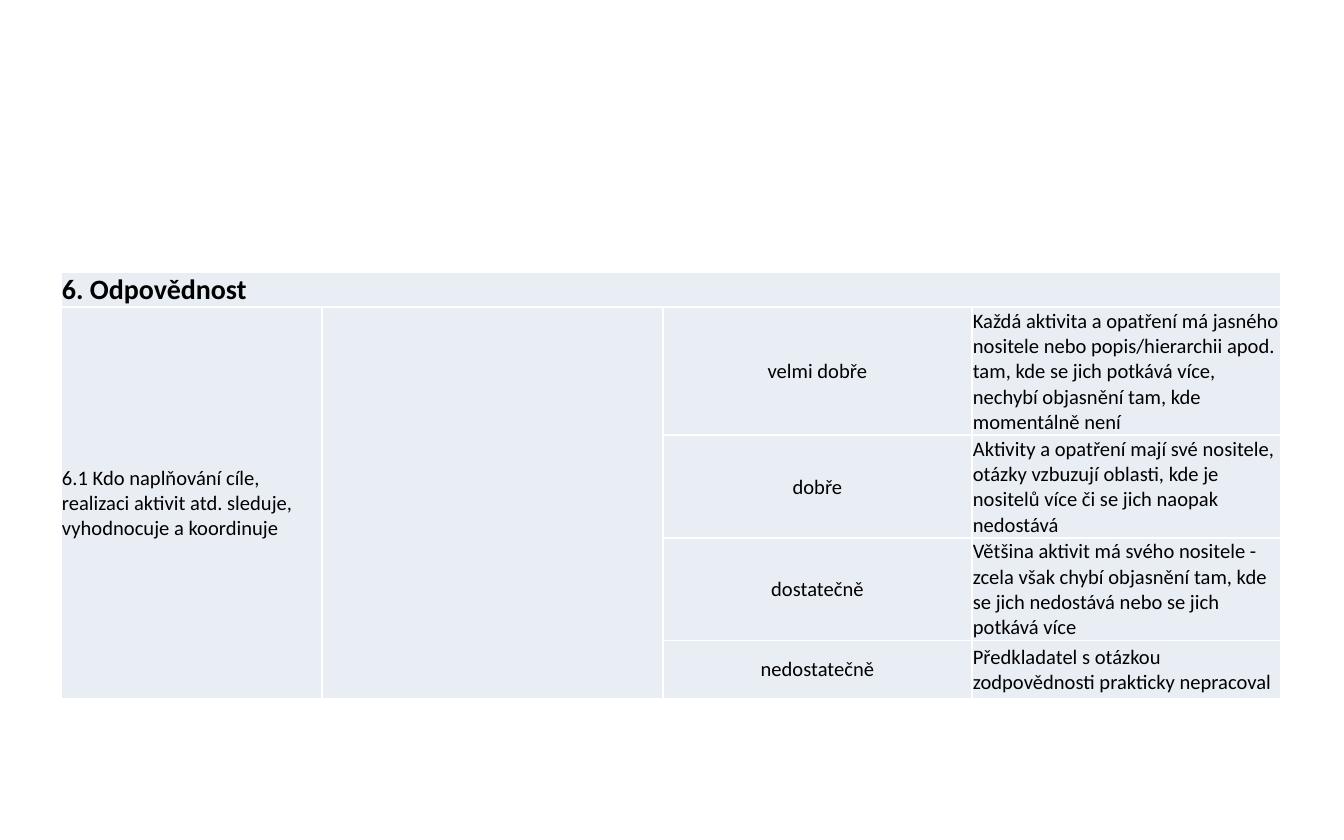
"""Build the slide with the rating table for responsibility."""
from lxml import etree
from pptx import Presentation
from pptx.dml.color import RGBColor
from pptx.enum.text import MSO_ANCHOR, PP_ALIGN
from pptx.oxml.ns import qn
from pptx.util import Emu, Pt

MIDDLE = MSO_ANCHOR.MIDDLE
LEFT, CENTER = PP_ALIGN.LEFT, PP_ALIGN.CENTER

BLACK = RGBColor(0x00, 0x00, 0x00)
WHITE = RGBColor(0xFF, 0xFF, 0xFF)
PALE_BLUE = RGBColor(0xE9, 0xED, 0xF4)
FONT = "Calibri"

HEADING = "6. Odpovědnost"
QUESTION = "6.1 Kdo naplňování cíle, realizaci aktivit atd. sleduje, vyhodnocuje a koordinuje"
RATINGS = [
    ("velmi dobře", "Každá aktivita a opatření má jasného nositele nebo popis/hierarchii apod. "
                    "tam, kde se jich potkává více, nechybí objasnění tam, kde momentálně není"),
    ("dobře", "Aktivity a opatření mají své nositele, otázky vzbuzují oblasti, "
              "kde je nositelů více či se jich naopak nedostává"),
    ("dostatečně", "Většina aktivit má svého nositele - zcela však chybí objasnění tam, "
                   "kde se jich nedostává nebo se jich potkává více"),
    ("nedostatečně", "Předkladatel s otázkou zodpovědnosti prakticky nepracoval"),
]

SLIDE_WIDTH, SLIDE_HEIGHT = 1344, 840
TABLE_LEFT, TABLE_TOP = 61, 272
COLUMN_WIDTHS = [261, 341, 309, 309]
ROW_HEIGHTS = [35, 127, 103, 102, 58]
INSET = 1
BORDER_WIDTH = Pt(1)


def px(length):
    """Turn a length in px into EMU."""
    return Emu(round(length * 914400 / 134.4))


def style_cell(cell):
    """Fill a cell and give it thin white borders."""
    cell.fill.solid()
    cell.fill.fore_color.rgb = PALE_BLUE
    cell.vertical_anchor = MIDDLE
    cell.margin_left = cell.margin_right = cell.margin_top = px(INSET)
    cell.margin_bottom = 0
    properties = cell._tc.get_or_add_tcPr()
    for position, side in enumerate(("a:lnL", "a:lnR", "a:lnT", "a:lnB")):
        border = etree.Element(qn(side), w=str(BORDER_WIDTH))
        fill = etree.SubElement(border, qn("a:solidFill"))
        etree.SubElement(fill, qn("a:srgbClr"), val=str(WHITE))
        properties.insert(position, border)


def write(cell, text, size=11, bold=False, align=LEFT):
    """Put one formatted paragraph into a cell."""
    cell.text_frame.text = text
    paragraph = cell.text_frame.paragraphs[0]
    paragraph.alignment = align
    font = paragraph.runs[0].font
    font.name, font.size, font.bold = FONT, Pt(size), bold
    font.color.rgb = BLACK


def main():
    """Lay out the table and save the presentation."""
    presentation = Presentation()
    presentation.slide_width = px(SLIDE_WIDTH)
    presentation.slide_height = px(SLIDE_HEIGHT)
    slide = presentation.slides.add_slide(presentation.slide_layouts[6])

    table = slide.shapes.add_table(
        len(ROW_HEIGHTS), len(COLUMN_WIDTHS), px(TABLE_LEFT), px(TABLE_TOP),
        px(sum(COLUMN_WIDTHS)), px(sum(ROW_HEIGHTS))).table
    table.first_row = table.horz_banding = False
    for column, width in zip(table.columns, COLUMN_WIDTHS):
        column.width = px(width)
    for row, height in zip(table.rows, ROW_HEIGHTS):
        row.height = px(height)
    for cell in table.iter_cells():
        style_cell(cell)

    last_row, last_column = len(ROW_HEIGHTS) - 1, len(COLUMN_WIDTHS) - 1
    table.cell(0, 0).merge(table.cell(0, last_column))
    for column in (0, 1):
        table.cell(1, column).merge(table.cell(last_row, column))

    write(table.cell(0, 0), HEADING, size=15, bold=True)
    write(table.cell(1, 0), QUESTION)
    for row, (rating, description) in enumerate(RATINGS, start=1):
        write(table.cell(row, 2), rating, align=CENTER)
        write(table.cell(row, 3), description)

    presentation.save("out.pptx")


if __name__ == "__main__":
    main()
